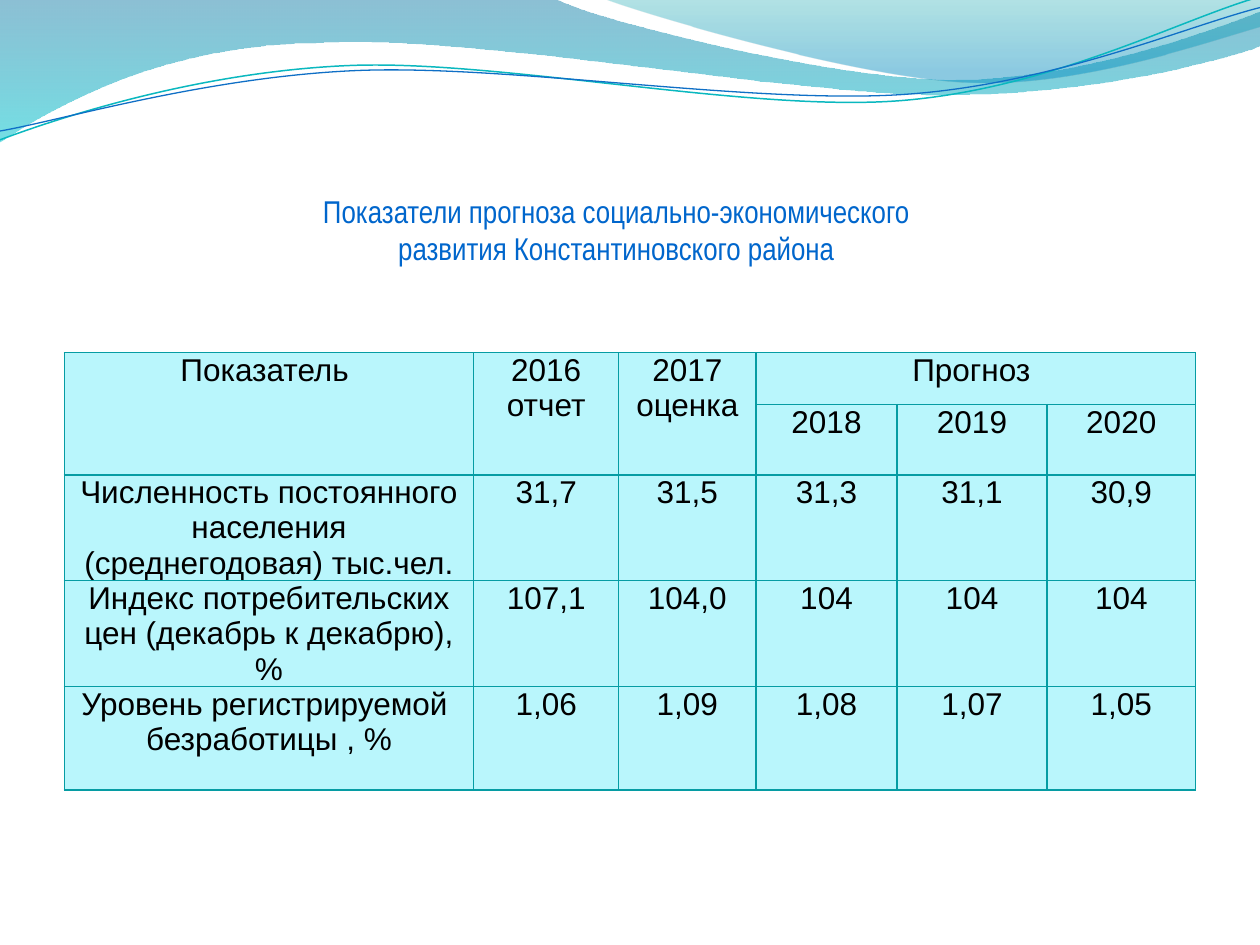
import dataclasses
import math

import lxml.etree
import pptx
import pptx.dml.color
import pptx.enum.text
import pptx.oxml.ns
import pptx.util

UNIT = pptx.util.Inches(0.01)  # the slide is a grid of 1000 columns by 750 rows
RIBBON_ANGLE = 357.3

Point = tuple[float, float]


@dataclasses.dataclass(frozen=True)
class Stroke:
    """An outline: a move, lines (one point) and Bezier curves (three points)."""
    start: Point
    segments: tuple[tuple[Point, ...], ...]


@dataclasses.dataclass(frozen=True)
class Wave:
    outline: Stroke
    stops: tuple[tuple[float, str, int], ...]  # position, colour, opacity in percent


@dataclasses.dataclass(frozen=True)
class Ribbon:
    outline: Stroke
    center: Point
    color: str
    width: float


WAVES = (
    Wave(Stroke((0, -1), (
        ((440, -1),),
        ((476, 17), (664, 63), (758, 63)),
        ((853, 63), (958, 26), (1000, 9)),
        ((1001, 36),),
        ((983, 44), (870, 76), (746, 75)),
        ((622, 75), (382, 28), (257, 34)),
        ((129, 35), (46, 83), (-1, 113)),
    )), ((0, "0074A1", 45), (1, "00C6CF", 55))),
    Wave(Stroke((479, -1), (
        ((509, 11), (682, 62), (769, 65)),
        ((856, 69), (961, 32), (1000, 21)),
        ((1000, 0),),
    )), ((0, "00A1A9", 30), (0.8, "008BBF", 45))),
)
RIBBONS = (
    Ribbon(Stroke((0, 111), (
        ((48, 93), (158, 57), (277, 52)),
        ((395, 47), (593, 89), (713, 80)),
        ((833, 71), (938, 15), (998, -2)),
    )), (499, 57.5), "0AB8BF", 0.85),
    Ribbon(Stroke((0, 104), (
        ((47, 96), (164, 61), (283, 56)),
        ((403, 51), (597, 83), (717, 75)),
        ((836, 67), (941, 21), (1000, 6)),
    )), (499.5, 59), "0F6FC6", 0.75),
)

TITLE = ("Показатели прогноза социально-экономического \n"
         "развития Константиновского района ")
COLUMNS = (325, 115, 109, 112, 119, 118)
ROWS = (41, 55, 84, 84, 82)
CELLS = (
    ("Показатель ", "2016 отчет", "2017 оценка", "Прогноз ", "", ""),
    ("", "", "", "2018", "2019", "2020"),
    ("Численность постоянного населения (среднегодовая) тыс.чел.",
     "31,7", "31,5", "31,3", "31,1", "30,9"),
    ("Индекс потребительских цен (декабрь к декабрю), %",
     "107,1", "104,0", "104", "104", "104"),
    ("Уровень регистрируемой  безработицы , %",
     "1,06", "1,09", "1,08", "1,07", "1,05"),
)
MERGES = (((0, 0), (1, 0)), ((0, 1), (1, 1)), ((0, 2), (1, 2)), ((0, 3), (0, 5)))


def rgb(color: str) -> pptx.dml.color.RGBColor:
    return pptx.dml.color.RGBColor.from_string(color)


def grid(*lengths: float) -> list[int]:
    return [round(length * UNIT) for length in lengths]


def turn(point: Point, center: Point, degrees: float) -> Point:
    """Turn a point clockwise about a center."""
    x, y = point[0] - center[0], point[1] - center[1]
    cosine, sine = math.cos(math.radians(degrees)), math.sin(math.radians(degrees))
    return center[0] + x * cosine - y * sine, center[1] + x * sine + y * cosine


def turn_stroke(stroke: Stroke, center: Point, degrees: float) -> Stroke:
    return Stroke(turn(stroke.start, center, degrees), tuple(
        tuple(turn(point, center, degrees) for point in segment)
        for segment in stroke.segments))


def draw_stroke(slide, stroke: Stroke, close: bool):
    """Lay all points as a polygon, then join each triple into a Bezier curve."""
    qn = pptx.oxml.ns.qn
    builder = slide.shapes.build_freeform(*grid(*stroke.start), scale=1.0)
    points = [grid(*point) for segment in stroke.segments for point in segment]
    builder.add_line_segments(points, close=close)
    shape = builder.convert_to_shape()
    shape.shadow.inherit = False
    lines = iter(list(shape.element.iter(qn("a:lnTo"))))
    for segment in stroke.segments:
        group = [next(lines) for _ in segment]
        if len(group) == 3:
            curve = lxml.etree.Element(qn("a:cubicBezTo"))
            group[0].addprevious(curve)
            for line in group:
                curve.append(line[0])
                line.getparent().remove(line)
    return shape


def draw_wave(slide, wave: Wave) -> None:
    shape = draw_stroke(slide, wave.outline, close=True)
    shape.line.fill.background()
    shape.fill.gradient()
    shape.fill.gradient_angle = 270
    for stop, (position, color, _) in zip(shape.fill.gradient_stops, wave.stops):
        stop.position = position
        stop.color.rgb = rgb(color)
    colors = shape.element.iterfind(".//" + pptx.oxml.ns.qn("a:srgbClr"))
    for element, (_, _, opacity) in zip(colors, wave.stops):
        alpha = lxml.etree.SubElement(element, pptx.oxml.ns.qn("a:alpha"))
        alpha.set("val", str(opacity * 1000))


def draw_ribbon(slide, ribbon: Ribbon) -> None:
    level = turn_stroke(ribbon.outline, ribbon.center, -RIBBON_ANGLE)
    shape = draw_stroke(slide, level, close=False)
    shape.rotation = RIBBON_ANGLE
    shape.fill.background()
    shape.line.color.rgb = rgb(ribbon.color)
    shape.line.width = pptx.util.Pt(ribbon.width)


def format_text(text_frame, font_name: str, color: str) -> None:
    """Centre every paragraph and set its runs in 18 points."""
    for paragraph in text_frame.paragraphs:
        paragraph.alignment = pptx.enum.text.PP_ALIGN.CENTER
        for run in paragraph.runs:
            run.font.name = font_name
            run.font.size = pptx.util.Pt(18)
            run.font.bold = False
            run.font.color.rgb = rgb(color)


def place_title(slide) -> None:
    title = slide.shapes.title
    title.element.getparent().append(title.element)  # in front of the waves
    title.left, title.top, title.width, title.height = grid(51, 147, 882, 94)
    title.text_frame.text = TITLE
    title.text_frame.word_wrap = False
    title.text_frame.auto_size = pptx.enum.text.MSO_AUTO_SIZE.NONE
    title.text_frame.vertical_anchor = pptx.enum.text.MSO_ANCHOR.TOP
    format_text(title.text_frame, "Arial Narrow", "0066CC")


def add_borders(cell, color: str, width: float) -> None:
    qn = pptx.oxml.ns.qn
    properties = cell._tc.get_or_add_tcPr()
    for side in ("L", "R", "T", "B"):
        line = lxml.etree.SubElement(properties, qn(f"a:ln{side}"))
        line.set("w", str(pptx.util.Pt(width)))
        fill = lxml.etree.SubElement(line, qn("a:solidFill"))
        lxml.etree.SubElement(fill, qn("a:srgbClr")).set("val", color)


def format_cell(cell, text: str) -> None:
    cell.text_frame.text = text
    cell.margin_left = cell.margin_right = UNIT * 7
    cell.margin_top = cell.margin_bottom = 0
    format_text(cell.text_frame, "Arial", "000000")
    add_borders(cell, "069CA3", 0.75)
    cell.fill.solid()
    cell.fill.fore_color.rgb = rgb("B9F6FC")


def draw_table(slide) -> None:
    table = slide.shapes.add_table(
        len(ROWS), len(COLUMNS), *grid(51, 280, sum(COLUMNS), sum(ROWS))).table
    table.first_row = table.horz_banding = False
    for column, width in zip(table.columns, grid(*COLUMNS)):
        column.width = width
    for row, height, texts in zip(table.rows, grid(*ROWS), CELLS):
        row.height = height
        for cell, text in zip(row.cells, texts):
            format_cell(cell, text)
    for first, last in MERGES:
        table.cell(*first).merge(table.cell(*last))


def main() -> None:
    presentation = pptx.Presentation()
    presentation.slide_width, presentation.slide_height = grid(1000, 750)
    slide = presentation.slides.add_slide(presentation.slide_layouts[5])
    for wave in WAVES:
        draw_wave(slide, wave)
    for ribbon in RIBBONS:
        draw_ribbon(slide, ribbon)
    place_title(slide)
    draw_table(slide)
    presentation.save("out.pptx")


if __name__ == "__main__":
    main()
